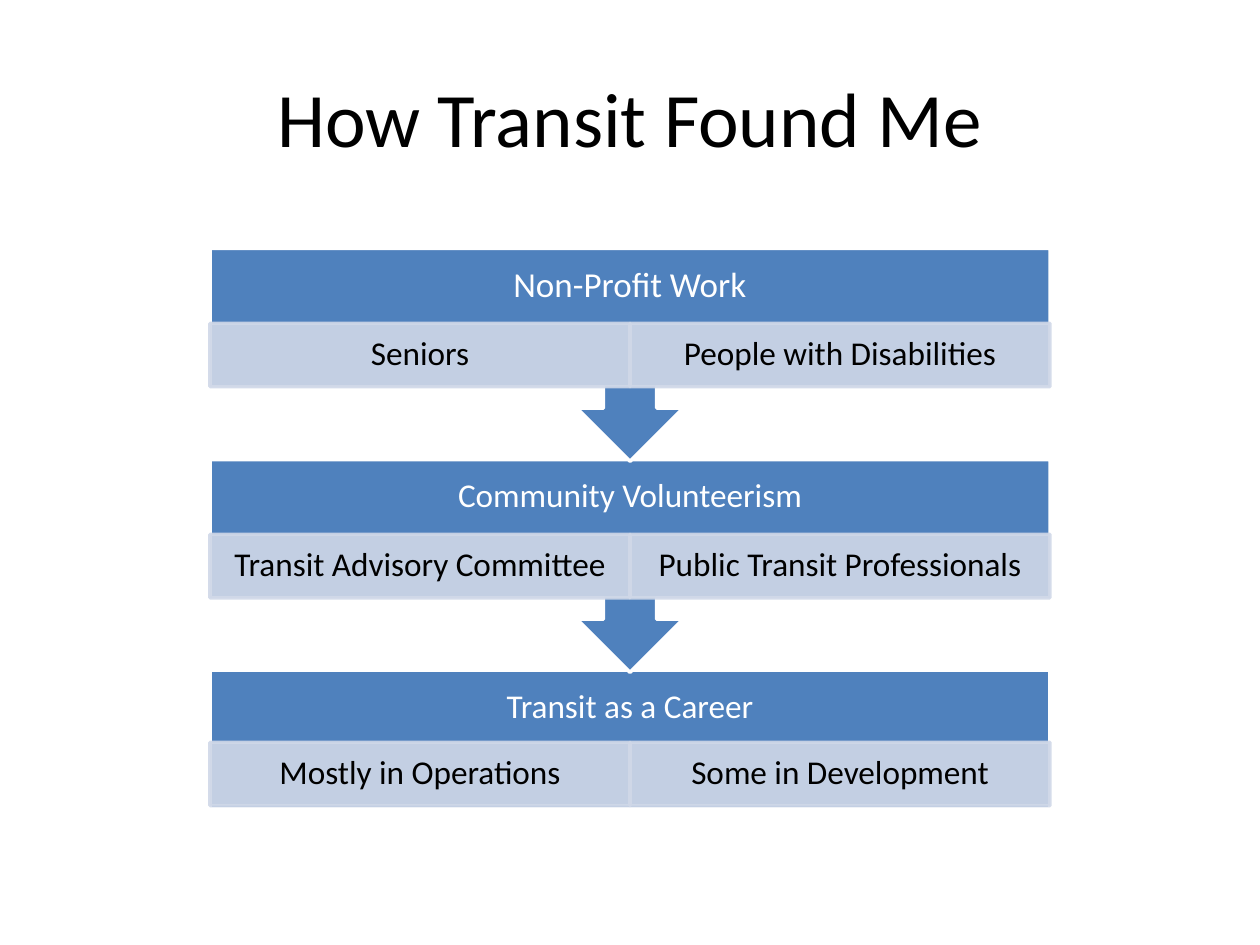
from lxml import etree
from pptx import Presentation
from pptx.dml.color import RGBColor
from pptx.enum.shapes import MSO_SHAPE
from pptx.enum.text import MSO_ANCHOR, PP_ALIGN
from pptx.oxml.ns import qn
from pptx.util import Pt

BLOCK = MSO_SHAPE.RECTANGLE
CALLOUT = MSO_SHAPE.UP_ARROW_CALLOUT
MIDDLE = MSO_ANCHOR.MIDDLE
CENTER = PP_ALIGN.CENTER

COLORS = {"blue": "4F81BD", "pale": "D0D8E8", "white": "FFFFFF", "black": "000000"}
FONT = "Calibri"
LEFT, WIDTH = 120, 480
FIRST_TOP, STEP = 142, 120.6
HEADING_HEIGHT, DETAIL_HEIGHT = 42.6, 36.2
STAGES = [
    ("Non-Profit Work", 20, ["Seniors", "People with Disabilities"]),
    ("Community Volunteerism", 19,
     ["Transit Advisory Committee", "Public Transit Professionals"]),
    ("Transit as a Career", 19, ["Mostly in Operations", "Some in Development"]),
]


def color(name):
    """Return the named colour."""
    return RGBColor.from_string(COLORS[name])


def write(box, text, size, ink, inset_x, inset_y):
    """Write one centred line into a box."""
    frame = box.text_frame
    frame.word_wrap = True
    frame.vertical_anchor = MIDDLE
    frame.margin_left = frame.margin_right = Pt(inset_x)
    frame.margin_top = frame.margin_bottom = Pt(inset_y)
    para = frame.paragraphs[0]
    para.alignment = CENTER
    span = para.add_run()
    span.text = text
    span.font.name = FONT
    span.font.size = Pt(size)
    span.font.color.rgb = color(ink)
    return para


def add_block(page, kind, area, fill, line):
    """Add a filled and outlined shape."""
    block = page.shapes.add_shape(kind, *map(Pt, area))
    block.shadow.inherit = False
    block.fill.solid()
    block.fill.fore_color.rgb = color(fill)
    block.line.color.rgb = color(line)
    block.line.width = Pt(2)
    return block


def add_heading(page, text, size, top):
    """Add the heading text of a stage."""
    box = page.shapes.add_textbox(Pt(LEFT), Pt(top), Pt(WIDTH), Pt(HEADING_HEIGHT))
    write(box, text, size, "white", 11, 11).line_spacing = 0.9


def add_detail(page, text, left, top):
    """Add a slightly transparent detail cell."""
    area = (left, top, WIDTH / 2, DETAIL_HEIGHT)
    cell = add_block(page, BLOCK, area, "pale", "pale")
    for tint in cell.element.spPr.iter(qn("a:srgbClr")):
        etree.SubElement(tint, qn("a:alpha"), val="90000")
    write(cell, text, 19, "black", 11, 2).line_spacing = 0.9


def add_stage(page, index):
    """Add one stage with its heading, its details and any arrow onward."""
    heading, size, details = STAGES[index]
    top = FIRST_TOP + index * STEP
    is_last = index == len(STAGES) - 1
    kind, height = (BLOCK, 79) if is_last else (CALLOUT, 121.6)
    panel = add_block(page, kind, (LEFT, top, WIDTH, height), "blue", "white")
    panel.rotation = 0 if is_last else 180
    add_heading(page, heading, size, top)
    detail_top = top + (41 if is_last else 42.8)
    for column, text in enumerate(details):
        add_detail(page, text, LEFT + column * WIDTH / 2, detail_top)


def add_title(page, text):
    """Place and fill the title."""
    title = page.shapes.title
    title.left, title.top, title.width, title.height = map(Pt, (36, 21.6, 648, 90))
    write(title, text, 44, "black", 7.2, 3.6)


def main():
    """Build the deck."""
    deck = Presentation()
    deck.slide_width, deck.slide_height = Pt(720), Pt(540)
    page = deck.slides.add_slide(deck.slide_layouts[5])
    add_title(page, "How Transit Found Me")
    for index in reversed(range(len(STAGES))):
        add_stage(page, index)
    deck.save("out.pptx")


if __name__ == "__main__":
    main()
